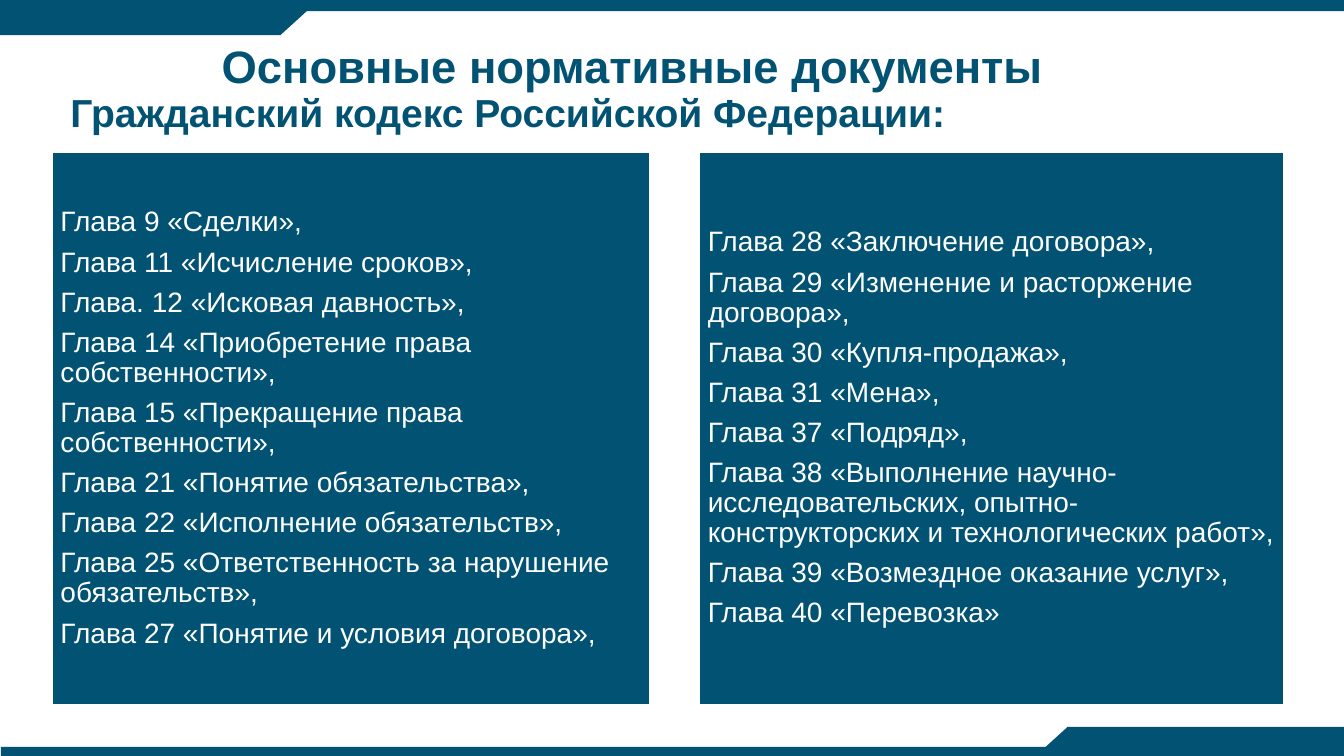
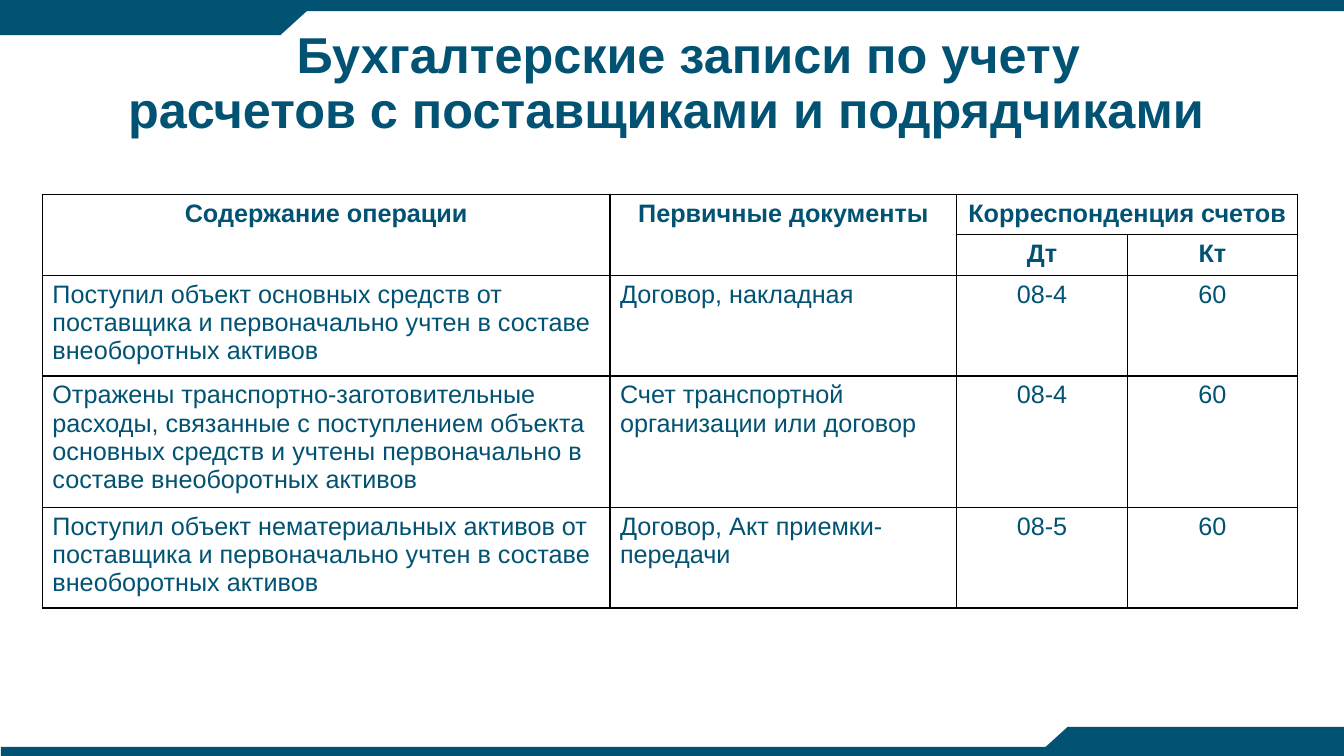
import pptx
import pptx.dml.color
import pptx.enum.shapes
import pptx.enum.text
import pptx.util
from lxml import etree
from pptx.oxml.ns import qn

Inches, Pt = pptx.util.Inches, pptx.util.Pt
RGBColor = pptx.dml.color.RGBColor
SHAPE = pptx.enum.shapes.MSO_SHAPE
ALIGN = pptx.enum.text.PP_ALIGN
ANCHOR = pptx.enum.text.MSO_ANCHOR

TEAL = RGBColor(0x02, 0x53, 0x73)
WHITE = RGBColor(0xFF, 0xFF, 0xFF)
BLACK = RGBColor(0, 0, 0)
FONT = "Arial"

# preset, left, top, width, height, rotation
BANDS = [
    (SHAPE.RECTANGLE, 0, 0, 13.33, 0.11, 0),
    (SHAPE.RECTANGLE, 0.01, 7.41, 13.32, 0.09, 0),
    (SHAPE.RECTANGLE, 0, 0.05, 2.78, 0.3, 0),
    (SHAPE.FLOWCHART_MERGE, 2.45, 0.05, 0.66, 0.3, 0),
    (SHAPE.RECTANGLE, 10.59, 7.21, 2.74, 0.29, 0),
    (SHAPE.FLOWCHART_MERGE, 10.26, 7.21, 0.66, 0.3, 180),
]

CODE_TITLE = [("Основные нормативные документы", 32.4),
              ("Гражданский кодекс Российской Федерации:", 27.9)]
ENTRIES_TITLE = [("Бухгалтерские записи по учету", 36),
                 ("расчетов с поставщиками и подрядчиками", 36)]

# left, width, chapters
CHAPTER_CARDS = [
    (0.52, 5.92, [
        "Глава 9 «Сделки»,",
        "Глава 11 «Исчисление сроков»,",
        "Глава. 12 «Исковая давность»,",
        "Глава 14 «Приобретение права собственности»,",
        "Глава 15 «Прекращение права собственности»,",
        "Глава 21 «Понятие обязательства»,",
        "Глава 22 «Исполнение обязательств»,",
        "Глава 25 «Ответственность за нарушение обязательств»,",
        "Глава 27 «Понятие и условия договора»,",
    ]),
    (6.94, 5.79, [
        "Глава 28 «Заключение договора»,",
        "Глава 29 «Изменение и расторжение договора»,",
        "Глава 30 «Купля-продажа»,",
        "Глава 31 «Мена»,",
        "Глава 37 «Подряд»,",
        "Глава 38 «Выполнение научно-исследовательских, "
        "опытно-конструкторских и технологических работ»,",
        "Глава 39 «Возмездное оказание услуг»,",
        "Глава 40 «Перевозка»",
    ]),
]

HEADER_ROWS = 2
COLUMN_WIDTHS = [5.63, 3.44, 1.69, 1.69]
ROW_HEIGHTS = [0.38, 0.38, 0.94, 1.22, 0.94]
MERGES = [((0, 0), (1, 0)), ((0, 1), (1, 1)), ((0, 2), (0, 3))]
ENTRIES = [
    ("Содержание операции", "Первичные документы", "Корреспонденция счетов", ""),
    ("", "", "Дт", "Кт"),
    ("Поступил объект основных средств от поставщика и первоначально "
     "учтен в составе внеоборотных активов",
     "Договор, накладная", "08-4", "60"),
    ("Отражены транспортно-заготовительные расходы, связанные с поступлением "
     "объекта основных средств и учтены первоначально в составе "
     "внеоборотных активов",
     "Счет транспортной организации или договор", "08-4", "60"),
    ("Поступил объект нематериальных активов от поставщика и первоначально "
     "учтен в составе внеоборотных активов",
     "Договор, Акт приемки-передачи", "08-5", "60"),
]


def add_span(para, text, size, color, bold=False):
    span = para.add_run()
    span.text = text
    span.font.name = FONT
    span.font.size = Pt(size)
    span.font.bold = bold
    span.font.color.rgb = color


def add_filled_shape(page, preset, left, top, width, height):
    shape = page.shapes.add_shape(preset, Inches(left), Inches(top),
                                  Inches(width), Inches(height))
    shape.shadow.inherit = False
    shape.fill.solid()
    shape.fill.fore_color.rgb = TEAL
    return shape


def add_page(deck):
    """Add a blank page with the bands that all slides share."""
    page = deck.slides.add_slide(deck.slide_layouts[6])
    for preset, left, top, width, height, rotation in BANDS:
        band = add_filled_shape(page, preset, left, top, width, height)
        band.line.fill.background()
        band.rotation = rotation
    return page


def add_title(page, lines, left, top, width, indent, align):
    """Set the title as one paragraph whose first line is indented."""
    box = page.shapes.add_textbox(Inches(left), Inches(top), Inches(width), Inches(1.04))
    frame = box.text_frame
    frame.word_wrap = True
    frame.margin_top = frame.margin_bottom = 0
    para = frame.paragraphs[0]
    para.alignment = align
    para.line_spacing = 0.9
    para._p.get_or_add_pPr().set("indent", str(Inches(indent)))
    for index, (text, size) in enumerate(lines):
        if index:
            para.add_line_break()
        add_span(para, text, size, TEAL, bold=True)


def add_chapter_card(page, left, width, chapters):
    card = add_filled_shape(page, SHAPE.RECTANGLE, left, 1.51, width, 5.48)
    card.line.color.rgb = WHITE
    card.line.width = Pt(1)
    frame = card.text_frame
    frame.word_wrap = True
    frame.vertical_anchor = ANCHOR.MIDDLE
    frame.margin_left = frame.margin_right = Inches(0.08)
    frame.margin_top = frame.margin_bottom = Inches(0.08)
    for index, chapter in enumerate(chapters):
        para = frame.add_paragraph() if index else frame.paragraphs[0]
        para.alignment = ALIGN.LEFT
        para.line_spacing = 0.9
        para.space_after = Pt(7)
        add_span(para, chapter, 20, WHITE)


def set_borders(cell):
    properties = cell._tc.get_or_add_tcPr()
    for position, side in enumerate(("a:lnL", "a:lnR", "a:lnT", "a:lnB")):
        line = etree.Element(qn(side), w=str(Pt(1)))
        fill = etree.SubElement(line, qn("a:solidFill"))
        etree.SubElement(fill, qn("a:srgbClr"), val=str(BLACK))
        properties.insert(position, line)


def add_entries_table(page):
    table = page.shapes.add_table(
        len(ROW_HEIGHTS), len(COLUMN_WIDTHS), Inches(0.42), Inches(1.93),
        Inches(sum(COLUMN_WIDTHS)), Inches(sum(ROW_HEIGHTS))).table
    table.first_row = table.horz_banding = False
    for column, width in zip(table.columns, COLUMN_WIDTHS):
        column.width = Inches(width)
    for row, height in zip(table.rows, ROW_HEIGHTS):
        row.height = Inches(height)
    for first, last in MERGES:
        table.cell(*first).merge(table.cell(*last))
    for row_index, entry in enumerate(ENTRIES):
        is_header = row_index < HEADER_ROWS
        for column_index, text in enumerate(entry):
            cell = table.cell(row_index, column_index)
            cell.fill.background()
            set_borders(cell)
            if text:
                para = cell.text_frame.paragraphs[0]
                centred = is_header or column_index >= 2
                para.alignment = ALIGN.CENTER if centred else ALIGN.LEFT
                add_span(para, text, 18, TEAL, bold=is_header)


def main():
    deck = pptx.Presentation()
    deck.slide_width, deck.slide_height = Inches(13.33), Inches(7.5)

    code_page = add_page(deck)
    add_title(code_page, CODE_TITLE, 0.6, 0.44, 11.81, 1.5, ALIGN.LEFT)
    for left, width, chapters in CHAPTER_CARDS:
        add_chapter_card(code_page, left, width, chapters)

    entries_page = add_page(deck)
    add_title(entries_page, ENTRIES_TITLE, 0.86, 0.3, 11.5, 0.44, ALIGN.CENTER)
    add_entries_table(entries_page)

    deck.save("out.pptx")


if __name__ == "__main__":
    main()
